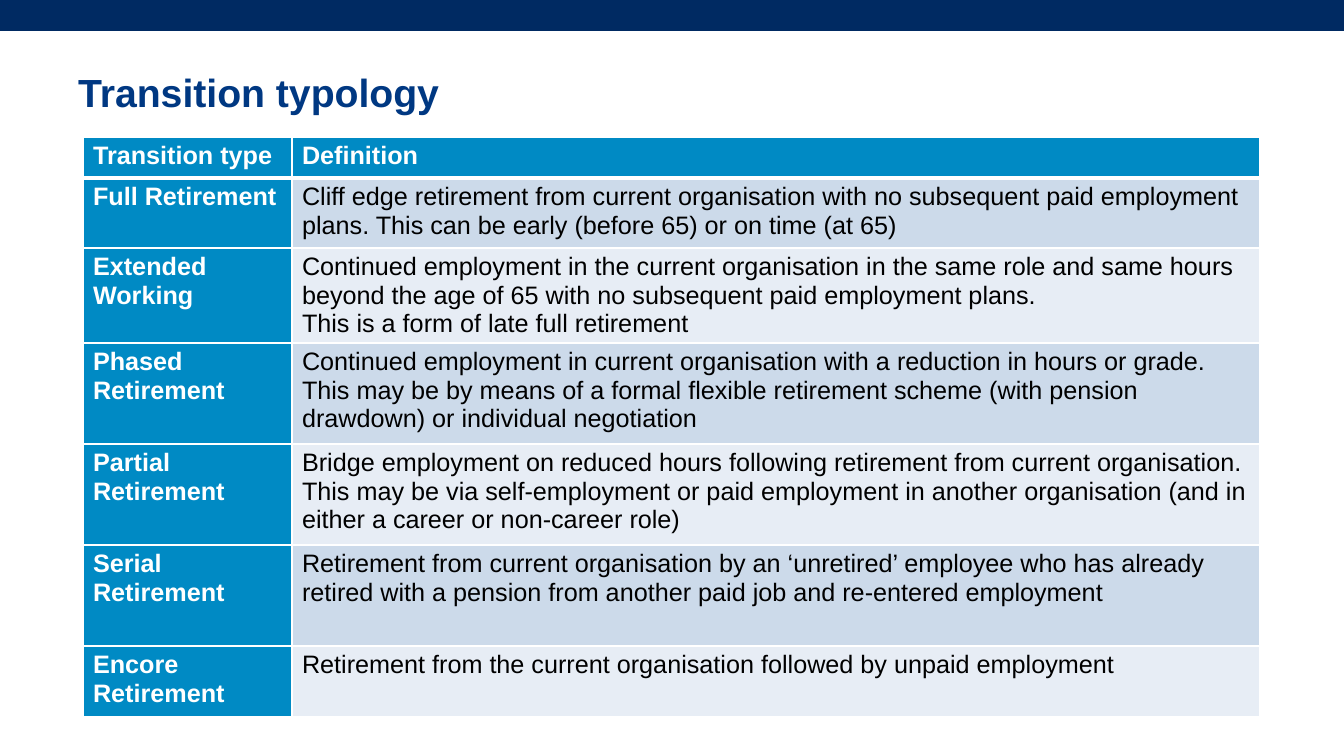
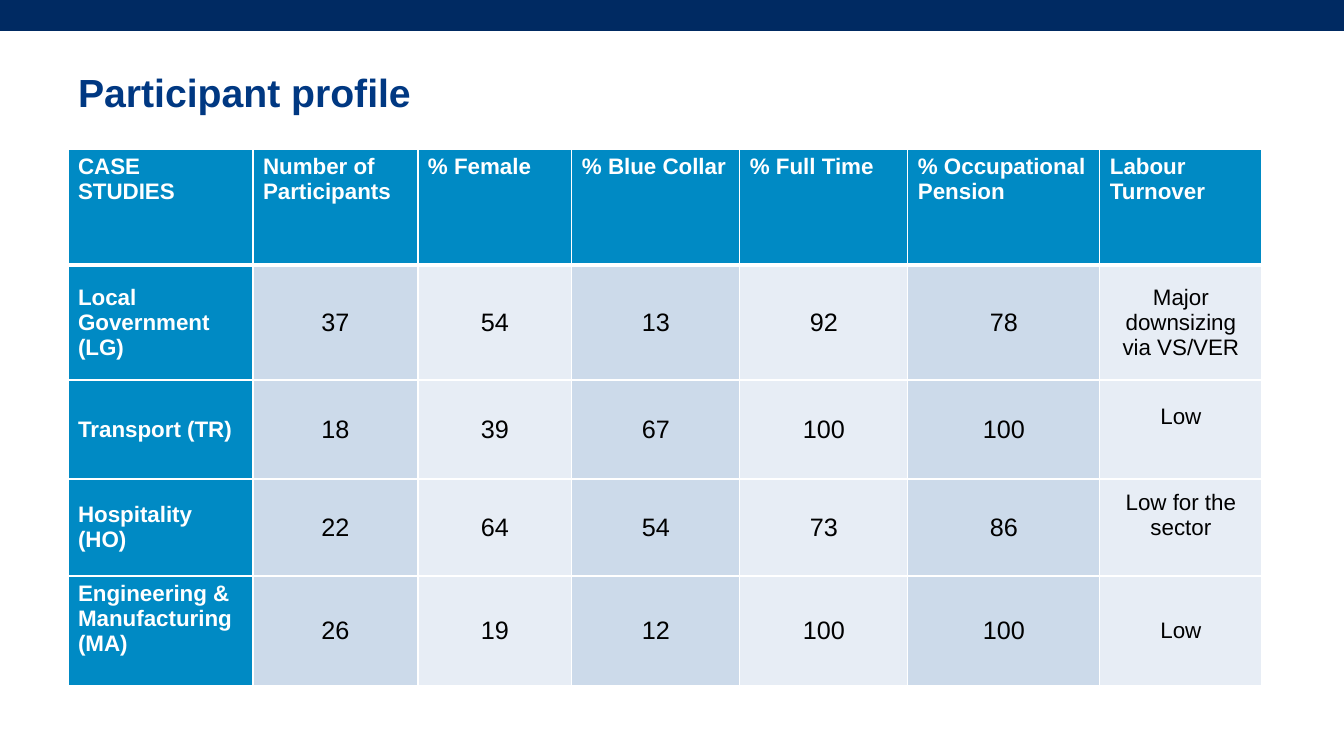
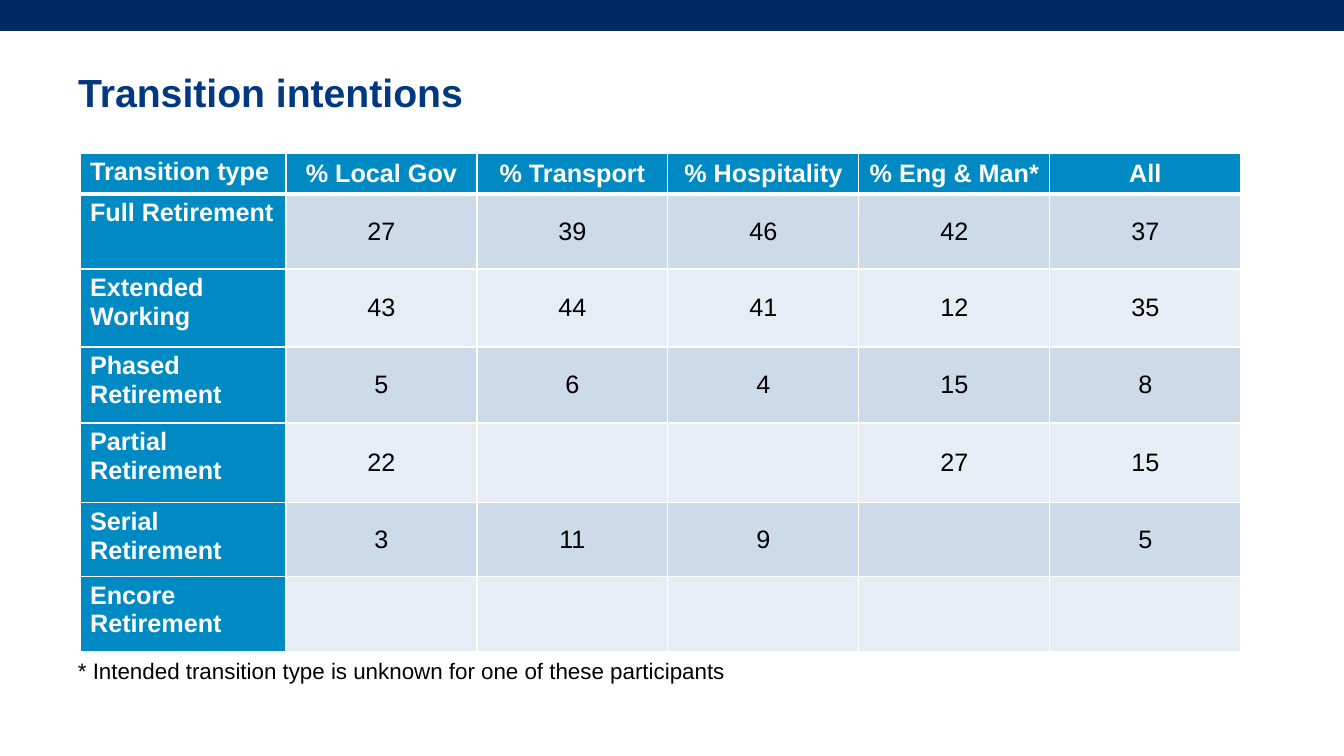
from lxml.etree import SubElement
from pptx import Presentation
from pptx.dml.color import RGBColor
from pptx.enum.shapes import MSO_SHAPE
from pptx.enum.text import MSO_ANCHOR, PP_ALIGN
from pptx.oxml.ns import qn
from pptx.util import Emu, Pt

WIDE, HIGH = 1344, 756
SCALE = 12192000 / WIDE
FONT = "Arial"
HEX = {"band": "002A62", "title": "003882", "head": "008AC4", "dark": "CCDAEA",
       "light": "E7EDF5", "white": "FFFFFF", "black": "000000"}
TOP, MID = MSO_ANCHOR.TOP, MSO_ANCHOR.MIDDLE
LEFT, CENTER = PP_ALIGN.LEFT, PP_ALIGN.CENTER

TYPES = ["Full Retirement", "Extended Working", "Phased Retirement",
         "Partial Retirement", "Serial Retirement", "Encore Retirement"]
NOTES = [
    "Cliff edge retirement from current organisation with no subsequent paid employment "
    "plans. This can be early (before 65) or on time (at 65)",
    "Continued employment in the current organisation in the same role and same hours "
    "beyond the age of 65 with no subsequent paid employment plans.\n"
    "This is a form of late full retirement",
    "Continued employment in current organisation with a reduction in hours or grade. "
    "This may be by means of a formal flexible retirement scheme (with pension drawdown) "
    "or individual negotiation",
    "Bridge employment on reduced hours following retirement from current organisation. "
    "This may be via self-employment or paid employment in another organisation "
    "(and in either a career or non-career role)",
    "Retirement from current organisation by an ‘unretired’ employee who has already "
    "retired with a pension from another paid job and re-entered employment",
    "Retirement from the current organisation followed by unpaid employment",
]
SHARES = [(27, 39, 46, 42, 37), (43, 44, 41, 12, 35), (5, 6, 4, 15, 8),
          (22, "", "", 27, 15), (3, 11, 9, "", 5), ("",) * 5]
CASES = [
    ("CASE STUDIES", "Number of Participants", "% Female", "% Blue Collar",
     "% Full Time", "% Occupational Pension", "Labour Turnover"),
    ("Local Government (LG)", 37, 54, 13, 92, 78, "Major downsizing via VS/VER"),
    ("Transport (TR)", 18, 39, 67, 100, 100, "Low"),
    ("Hospitality (HO)", 22, 64, 54, 73, 86, "Low for the sector"),
    ("Engineering & Manufacturing (MA)", 26, 19, 12, 100, 100, "Low"),
]

# "head", "label" and "body" give the text format of the three parts of a table
PLAIN = {"size": 18}
MIDDLE = {"size": 18, "align": CENTER, "anchor": MID}
SLIDES = [
    {"title": "Transition typology", "at": (83, 137),
     "cols": [209, 968], "rows": [41, 70, 95, 101, 101, 101, 71],
     "data": [("Transition type", "Definition"), *zip(TYPES, NOTES)],
     "head": PLAIN, "label": PLAIN, "body": PLAIN},
    {"title": "Participant profile", "at": (68, 149),
     "cols": [185, 165, 154, 168, 168, 192, 162], "rows": [116, 115, 99, 97, 110],
     "data": CASES, "stripe": "cols", "small": 6,
     "raised": [(2, 6), (3, 6), (4, 0)],
     "head": {"size": 16}, "label": {"size": 16, "anchor": MID}, "body": MIDDLE},
    {"title": "Transition intentions", "at": (80, 153),
     "cols": [206] + [191] * 5, "rows": [41, 75, 78, 76, 80, 74, 75],
     "data": [("Transition type", "% Local Gov", "% Transport", "% Hospitality",
               "% Eng & Man*", "All")] + [(t, *s) for t, s in zip(TYPES, SHARES)],
     "head": MIDDLE, "label": PLAIN, "body": MIDDLE,
     "foot": "* Intended transition type is unknown for one of these participants"},
]


def px(n):
    return Emu(round(n * SCALE))


def rgb(name):
    return RGBColor.from_string(HEX[name])


def write(frame, text, size=18, color="black", bold=False, align=LEFT, anchor=TOP):
    frame.word_wrap = True
    frame.vertical_anchor = anchor
    frame.text = str(text)
    for para in frame.paragraphs:
        para.alignment = align
        for run in para.runs:
            font = run.font
            font.name, font.size, font.bold = FONT, Pt(size), bold
            font.color.rgb = rgb(color)


def edge(cell, row):
    """Draw white cell borders, thick under the header row."""
    props = cell._tc.get_or_add_tcPr()
    thick = {0: "lnB", 1: "lnT"}.get(row)
    for side in ("lnL", "lnR", "lnT", "lnB"):
        line = SubElement(props, qn("a:" + side), w=str(Pt(3 if side == thick else 1)))
        fill = SubElement(line, qn("a:solidFill"))
        SubElement(fill, qn("a:srgbClr"), val=HEX["white"])


def grid(slide, item):
    data, cols, rows = item["data"], item["cols"], item["rows"]
    box = [px(n) for n in (*item["at"], sum(cols), sum(rows))]
    table = slide.shapes.add_table(len(rows), len(cols), *box).table
    table.first_row = table.horz_banding = False
    for col, width in zip(table.columns, cols):
        col.width = px(width)
    for row, height in zip(table.rows, rows):
        row.height = px(height)
    for r, line in enumerate(data):
        for c, text in enumerate(line):
            cell = table.cell(r, c)
            edge(cell, r)
            main = r == 0 or c == 0
            part = "label" if c == 0 else "head" if r == 0 else "body"
            style = dict(item[part])
            if r == c == 0:
                style["anchor"] = TOP
            if r and c == item.get("small"):
                style["size"] = 16
            step = c if item.get("stripe") == "cols" else r
            cell.fill.solid()
            cell.fill.fore_color.rgb = rgb("head" if main else "dark" if step % 2 else "light")
            cell.vertical_anchor = style.pop("anchor", TOP)
            if (r, c) in item.get("raised", []):
                cell.margin_bottom = px(30)
            if text != "":
                fill_cell(cell, text, main, style)


def fill_cell(cell, text, main, style):
    anchor = cell.vertical_anchor
    write(cell.text_frame, text, color="white" if main else "black", bold=main, **style)
    cell.vertical_anchor = anchor


def dress(layout, slide):
    """Give the layout its title place and the master its top band."""
    title = layout.placeholders[0]
    title.left, title.top, title.width, title.height = map(px, (68, 60, 1219, 64))
    band = slide.shapes.add_shape(MSO_SHAPE.RECTANGLE, 0, 0, px(WIDE), px(31))
    band.shadow.inherit = False
    band.fill.solid()
    band.fill.fore_color.rgb = rgb("band")
    band.line.fill.background()
    band.element.nvSpPr.cNvPr.set("id", "90")
    layout.slide_master.shapes.element.insert(2, band.element)


def main():
    deck = Presentation()
    deck.slide_width, deck.slide_height = px(WIDE), px(HIGH)
    layout = deck.slide_layouts[5]
    for i, item in enumerate(SLIDES):
        slide = deck.slides.add_slide(layout)
        if i == 0:
            dress(layout, slide)
        write(slide.shapes.title.text_frame, item["title"], size=28, color="title",
              bold=True, anchor=MID)
        grid(slide, item)
        if "foot" in item:
            note = slide.shapes.add_textbox(*map(px, (68, 652, 717, 37)))
            write(note.text_frame, item["foot"], size=16)
    deck.save("out.pptx")


if __name__ == "__main__":
    main()
